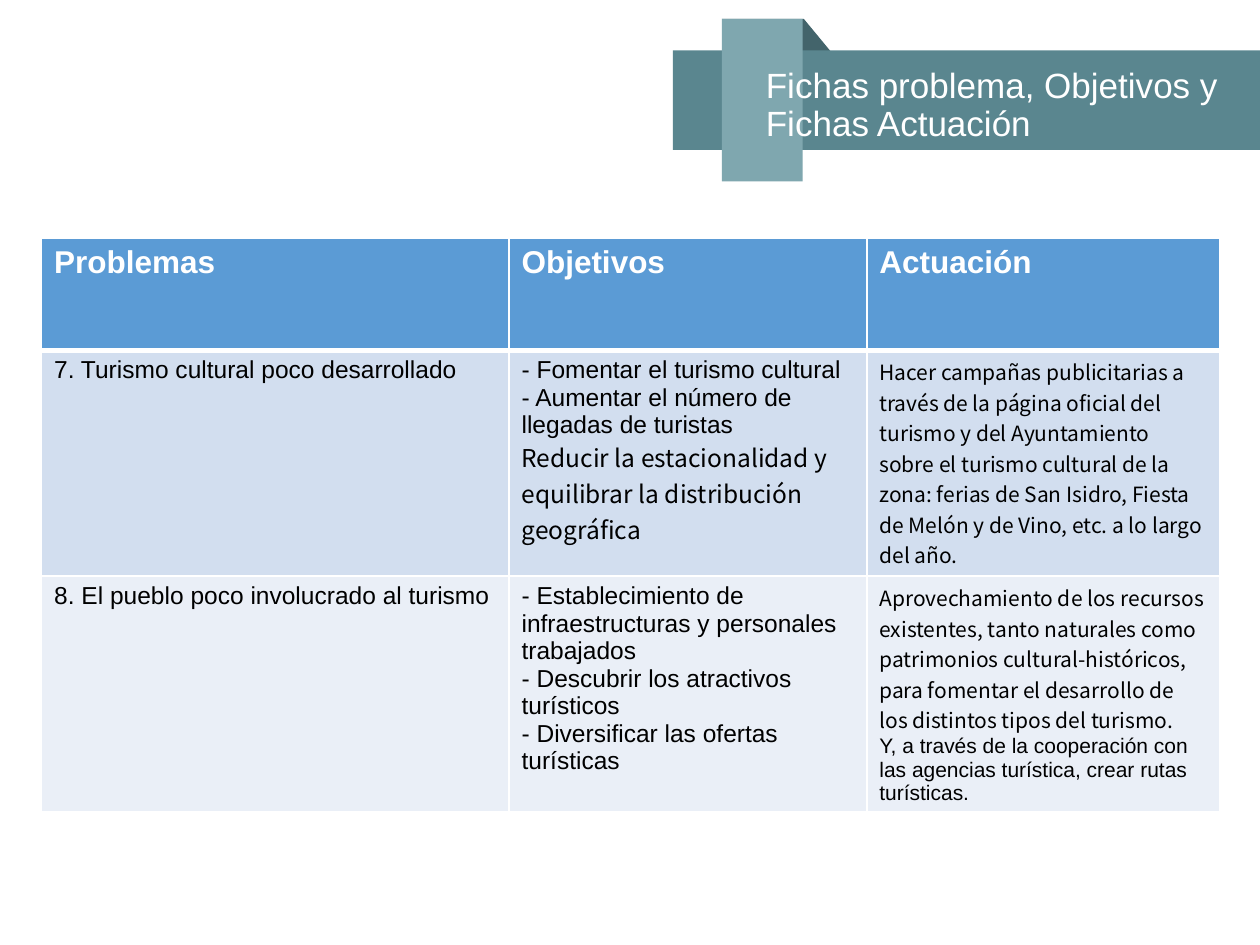
from lxml import etree
from pptx import Presentation, util as u
from pptx.dml.color import RGBColor
from pptx.enum import shapes, text
from pptx.oxml import ns

WIDTH, HEIGHT = u.Inches(10), u.Inches(7.5)
SANS, CJK = "Arial", "Noto Sans CJK JP"
HEADINGS = ["Problemas", "Objetivos", "Actuación"]
COLUMN_SHARES = [37.1, 28.4, 28]
ROW_SHARES = [11.87, 16, 23.6]
ROW_FILLS = ["5B9BD5", "D2DEEF", "EAEFF7"]
BODY = [
    [
        [("7. Turismo cultural poco desarrollado", 14, SANS)],
        [
            ("- Fomentar el turismo cultural", 14, SANS),
            ("- Aumentar el número de llegadas de turistas", 14, SANS),
            ("Reducir la estacionalidad y equilibrar la distribución geográfica", 14, CJK),
        ],
        [
            ("Hacer campañas publicitarias a través de la página oficial del turismo "
             "y del Ayuntamiento sobre el turismo cultural de la zona: ferias de San "
             "Isidro, Fiesta de Melón y de Vino, etc. a lo largo del año.", 12, CJK),
        ],
    ],
    [
        [("8. El pueblo poco involucrado al turismo", 14, SANS)],
        [
            ("- Establecimiento de infraestructuras y personales trabajados", 14, SANS),
            ("- Descubrir los atractivos turísticos", 14, SANS),
            ("- Diversificar las ofertas turísticas", 14, SANS),
        ],
        [
            ("Aprovechamiento de los recursos existentes, tanto naturales como "
             "patrimonios cultural-históricos, para fomentar el desarrollo de los "
             "distintos tipos del turismo.", 12, CJK),
            ("Y, a través de la cooperación con las agencias turística, crear rutas "
             "turísticas.", 12, SANS),
        ],
    ],
]


def across(share):
    """Return a percentage of the slide width."""
    return int(WIDTH * share / 100)


def down(share):
    """Return a percentage of the slide height."""
    return int(HEIGHT * share / 100)


def paint(fill, color):
    """Fill with a solid hex colour."""
    fill.solid()
    fill.fore_color.rgb = RGBColor.from_string(color)


def finish(shape, color):
    """Give a shape a flat fill with no outline or shadow."""
    paint(shape.fill, color)
    shape.line.fill.background()
    shape.shadow.inherit = False


def add_bar(page, left, top, width, height, color):
    """Add a flat rectangle placed by slide shares."""
    bar = page.shapes.add_shape(
        shapes.MSO_SHAPE.RECTANGLE, across(left), down(top), across(width), down(height))
    finish(bar, color)


def add_fold(page, corners, color):
    """Add a flat polygon through corners given as slide shares."""
    points = [(across(x), down(y)) for x, y in corners]
    builder = page.shapes.build_freeform(*points[0])
    builder.add_line_segments(points[1:], close=True)
    finish(builder.convert_to_shape(), color)


def write(frame, lines, color, bold=False):
    """Write one paragraph for each (wording, size, font) line."""
    for index, (wording, size, face) in enumerate(lines):
        para = frame.add_paragraph() if index else frame.paragraphs[0]
        span = para.add_run()
        span.text = wording
        span.font.size, span.font.name, span.font.bold = u.Pt(size), face, bold
        span.font.color.rgb = RGBColor.from_string(color)


def set_borders(cell, top, bottom):
    """Draw white cell borders with the given top and bottom points."""
    properties = cell._tc.get_or_add_tcPr()
    sides = {"lnL": 1, "lnR": 1, "lnT": top, "lnB": bottom}
    for index, (side, points) in enumerate(sides.items()):
        line = etree.Element(ns.qn(f"a:{side}"), w=str(u.Pt(points)))
        solid = etree.SubElement(line, ns.qn("a:solidFill"))
        etree.SubElement(solid, ns.qn("a:srgbClr"), val="FFFFFF")
        properties.insert(index, line)


def add_problem_table(page):
    """Add the table of problems, objectives and actions."""
    rows = [[[(heading, 18, SANS)] for heading in HEADINGS]] + BODY
    table = page.shapes.add_table(
        len(rows), len(HEADINGS), across(3.3), down(25.2),
        across(sum(COLUMN_SHARES)), down(sum(ROW_SHARES))).table
    for column, share in zip(table.columns, COLUMN_SHARES):
        column.width = across(share)
    for row, contents in enumerate(rows):
        table.rows[row].height = down(ROW_SHARES[row])
        for column, lines in enumerate(contents):
            cell = table.cell(row, column)
            paint(cell.fill, ROW_FILLS[row])
            set_borders(cell, 3 if row == 1 else 1, 3 if row == 0 else 1)
            write(cell.text_frame, lines, "000000" if row else "FFFFFF", row == 0)


def add_title(page):
    """Add the title over the ribbon."""
    box = page.shapes.add_textbox(across(59.8), down(5.87), across(38.8), down(8.8))
    frame = box.text_frame
    frame.word_wrap = True
    frame.vertical_anchor = text.MSO_ANCHOR.TOP
    frame.margin_left = frame.margin_right = u.Inches(0.1)
    frame.margin_top = frame.margin_bottom = u.Inches(0.1)
    write(frame, [("Fichas problema, Objetivos y Fichas Actuación", 20, SANS)], "FFFFFF")
    frame.paragraphs[0].line_spacing = 0.9


def main():
    """Build and save the slide."""
    deck = Presentation()
    deck.slide_width, deck.slide_height = WIDTH, HEIGHT
    page = deck.slides.add_slide(deck.slide_layouts[6])
    paint(page.background.fill, "FFFFFF")
    add_fold(page, [(57.3, 2), (63.8, 2), (70, 12)], "43646B")
    add_bar(page, 53.4, 5.33, 46.6, 10.53, "5A868F")
    add_bar(page, 57.3, 2, 6.4, 17.2, "7FA7AF")
    add_problem_table(page)
    add_title(page)
    deck.save("out.pptx")


if __name__ == "__main__":
    main()
